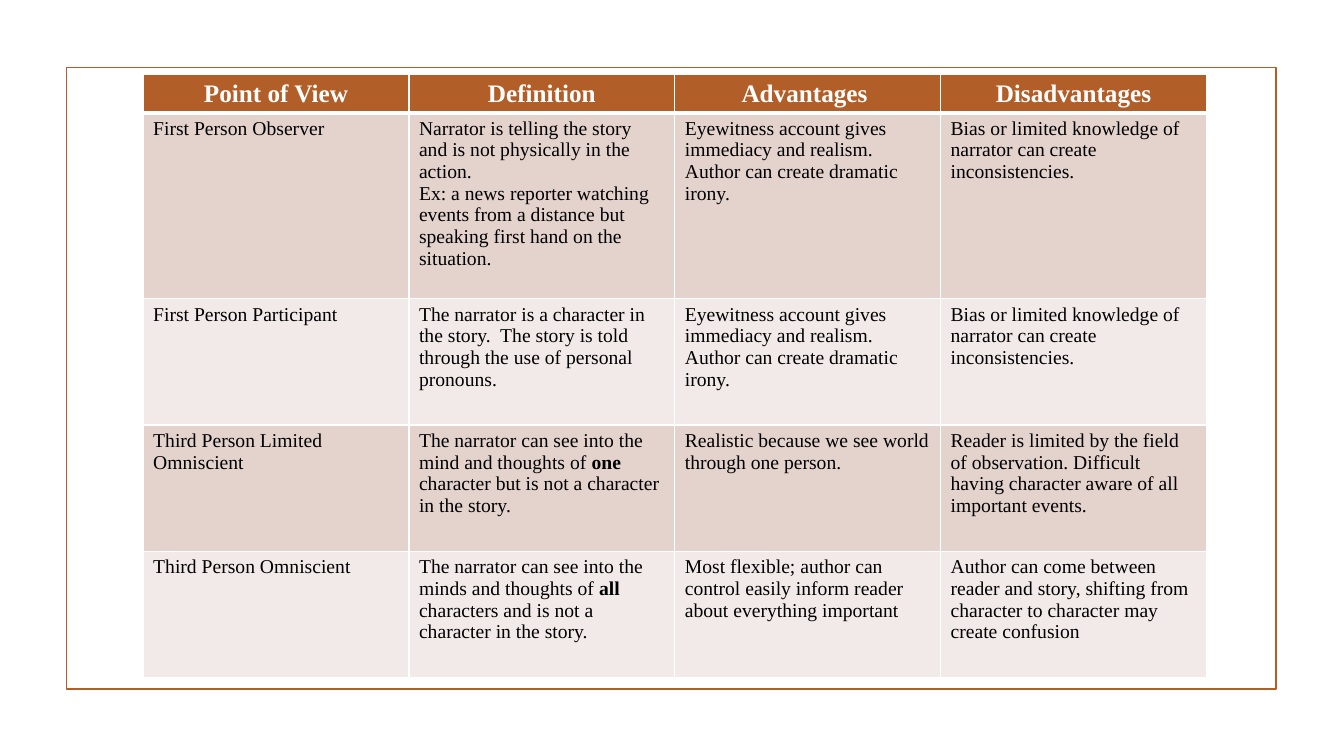
"""Build a slide with a framed table comparing narrative points of view."""
import dataclasses

import lxml.etree
import pptx
import pptx.dml.color
import pptx.enum.shapes
import pptx.enum.text
import pptx.oxml.ns
import pptx.util

COLORS = {"accent": "B15E28", "dark_band": "E4D2CD", "light_band": "F2EAE8",
          "white": "FFFFFF", "black": "000000"}
WIDTH, HEIGHT = pptx.util.Inches(13.333), pptx.util.Inches(7.5)
HEADER_ROW, FIRST_ROW, OTHER_ROW = 5.05, 24.6, 16.7
EYEWITNESS = "Eyewitness account gives immediacy and realism. Author can create dramatic irony."
BIAS = "Bias or limited knowledge of narrator can create inconsistencies."


@dataclasses.dataclass(frozen=True)
class Area:
    """A rectangle in percent of the slide's width and height."""
    left: float
    top: float
    width: float
    height: float

    def box(self) -> tuple[int, int, int, int]:
        return across(self.left), down(self.top), across(self.width), down(self.height)


@dataclasses.dataclass(frozen=True)
class Row:
    """A table row; double asterisks in its texts switch bold on and off."""
    height: float
    texts: tuple[str, ...]


@dataclasses.dataclass(frozen=True)
class Style:
    """The look of one kind of table row."""
    fill: str
    color: str
    size: float
    bold: bool
    align: pptx.enum.text.PP_ALIGN
    top: float
    bottom: float


ALIGN = pptx.enum.text.PP_ALIGN
HEADER = Style("accent", "white", 18, True, ALIGN.CENTER, 1, 3)
FIRST = Style("dark_band", "black", 14, False, ALIGN.LEFT, 3, 1)
DARK = dataclasses.replace(FIRST, top=1)
LIGHT = dataclasses.replace(DARK, fill="light_band")
STYLES = (HEADER, FIRST, LIGHT, DARK, LIGHT)

FRAME = Area(4.95, 8.93, 90, 82.27)
TABLE = Area(10.65, 9.87, 79.12, HEADER_ROW + FIRST_ROW + 3 * OTHER_ROW)
ROWS = (
    Row(HEADER_ROW, ("Point of View", "Definition", "Advantages ", "Disadvantages")),
    Row(FIRST_ROW, (
        "First Person Observer",
        "Narrator is telling the story and is not physically in the action.\n"
        "Ex: a news reporter watching events from a distance but speaking first hand "
        "on the situation.",
        EYEWITNESS, BIAS)),
    Row(OTHER_ROW, (
        "First Person Participant",
        "The narrator is a character in the story.  The story is told through the use "
        "of personal pronouns.",
        EYEWITNESS, BIAS)),
    Row(OTHER_ROW, (
        "Third Person Limited Omniscient",
        "The narrator can see into the mind and thoughts of **one** character but is not "
        "a character in the story.",
        "Realistic because we see world through one person.",
        "Reader is limited by the field of observation. Difficult having character aware "
        "of all important events.")),
    Row(OTHER_ROW, (
        "Third Person Omniscient",
        "The narrator can see into the minds and thoughts of** all **characters and is not "
        "a character in the story.",
        "Most flexible; author can control easily inform reader about everything important",
        "Author can come between reader and story, shifting from character to character "
        "may create confusion")),
)


def across(share: float) -> int:
    return round(WIDTH * share / 100)


def down(share: float) -> int:
    return round(HEIGHT * share / 100)


def rgb(name: str) -> pptx.dml.color.RGBColor:
    return pptx.dml.color.RGBColor.from_string(COLORS[name])


def add_borders(cell, style: Style) -> None:
    qn = pptx.oxml.ns.qn
    tcPr = cell._tc.get_or_add_tcPr()
    for side, points in {"L": 1, "R": 1, "T": style.top, "B": style.bottom}.items():
        ln = lxml.etree.SubElement(tcPr, qn(f"a:ln{side}"), w=str(pptx.util.Pt(points)))
        fill = lxml.etree.SubElement(ln, qn("a:solidFill"))
        lxml.etree.SubElement(fill, qn("a:srgbClr"), val=COLORS["white"])


def fill_cell(cell, text: str, style: Style) -> None:
    add_borders(cell, style)
    cell.fill.solid()
    cell.fill.fore_color.rgb = rgb(style.fill)
    tf = cell.text_frame
    for i, line in enumerate(text.split("\n")):
        p = tf.add_paragraph() if i else tf.paragraphs[0]
        p.alignment = style.align
        for j, part in enumerate(line.split("**")):
            r = p.add_run()
            r.text = part
            formats = {"name": "Times New Roman", "size": pptx.util.Pt(style.size),
                       "bold": style.bold or j % 2 == 1}
            for key, value in formats.items():
                setattr(r.font, key, value)
            r.font.color.rgb = rgb(style.color)


def add_frame(s) -> None:
    sp = s.shapes.add_shape(pptx.enum.shapes.MSO_SHAPE.RECTANGLE, *FRAME.box())
    sp.shadow.inherit = False
    sp.fill.background()
    sp.line.color.rgb = rgb("accent")
    sp.line.width = pptx.util.Pt(1.25)


def add_comparison(s) -> None:
    table = s.shapes.add_table(len(ROWS), len(ROWS[0].texts), *TABLE.box()).table
    for column in table.columns:
        column.width = across(TABLE.width / len(table.columns))
    for i, (row, style) in enumerate(zip(ROWS, STYLES)):
        table.rows[i].height = down(row.height)
        for j, text in enumerate(row.texts):
            fill_cell(table.cell(i, j), text, style)


def main() -> None:
    prs = pptx.Presentation()
    prs.slide_width, prs.slide_height = WIDTH, HEIGHT
    s = prs.slides.add_slide(prs.slide_layouts[6])
    add_frame(s)
    add_comparison(s)
    prs.save("out.pptx")


if __name__ == "__main__":
    main()
